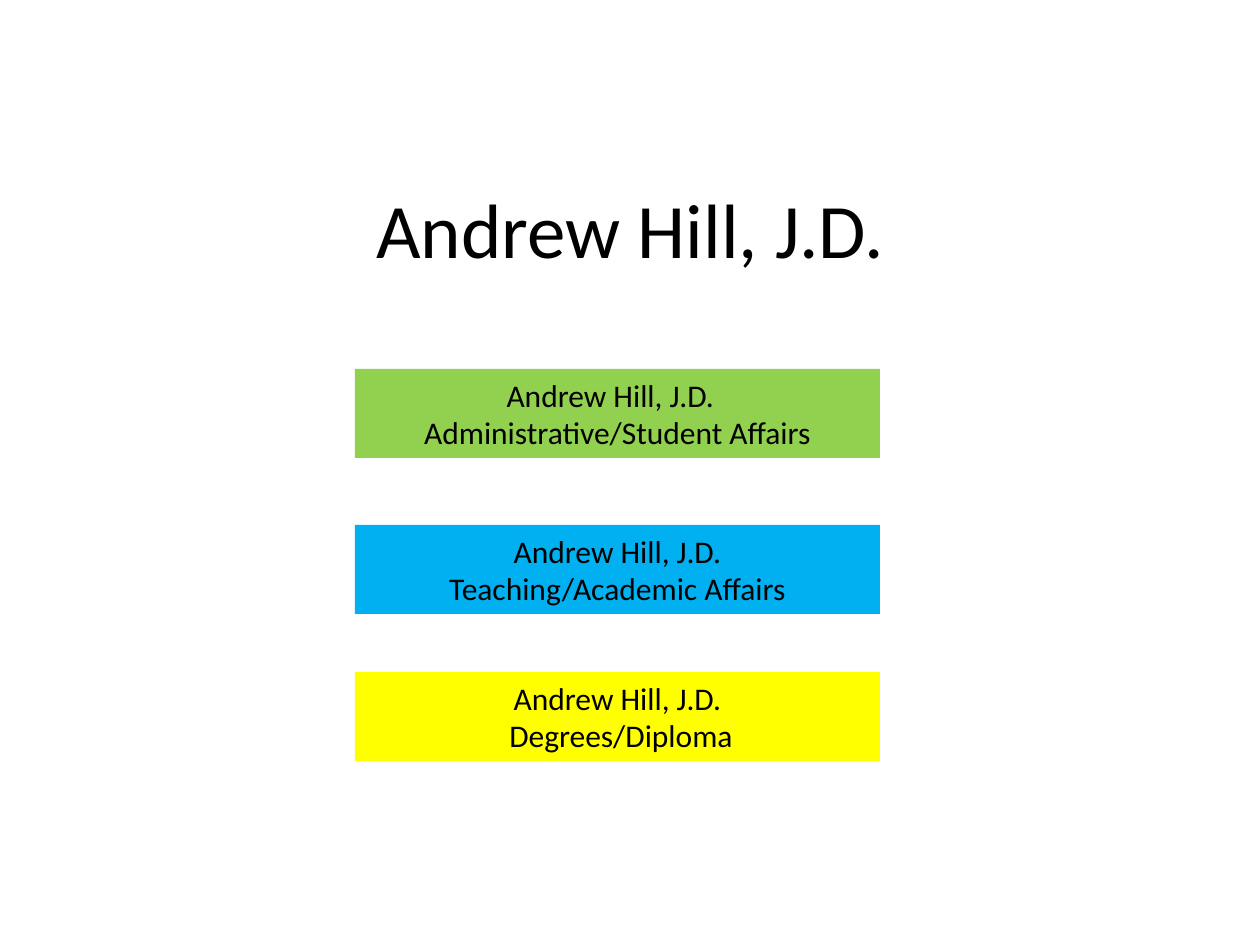
from pptx import Presentation
from pptx import util as u
from pptx.dml.color import RGBColor
from pptx.enum import shapes, text

PX = u.Inches(1) // 126
NAME = "Andrew Hill, J.D."
BARS = [
    (369, "92D050", NAME + "  \vAdministrative/Student Affairs"),
    (525, "00B0F0", NAME + "\nTeaching/Academic Affairs"),
    (672, "FFFF00", NAME + "\n Degrees/Diploma"),
]


def color(code):
    """Turn a hex string into a colour."""
    return RGBColor.from_string(code)


def place(*box):
    """Turn px lengths into EMU."""
    return [n * PX for n in box]


def write(shape, words, size):
    """Fill a shape with centred black text."""
    frame = shape.text_frame
    frame.text = words
    frame.word_wrap = True
    frame.vertical_anchor = text.MSO_ANCHOR.MIDDLE
    style = {"name": "Calibri", "size": u.Pt(size)}
    for para in frame.paragraphs:
        para.alignment = text.PP_ALIGN.CENTER
        for key, value in style.items():
            setattr(para.font, key, value)
        para.font.color.rgb = color("000000")


def title(slide, words):
    """Add the large name."""
    write(slide.shapes.add_textbox(*place(95, 126, 1071, 203)), words, 44)


def bar(slide, top, fill, words):
    """Add a filled bar with its label."""
    box = place(355, top, 525, 89)
    shape = slide.shapes.add_shape(shapes.MSO_SHAPE.RECTANGLE, *box)
    shape.shadow.inherit = False
    shape.fill.solid()
    shape.fill.fore_color.rgb = color(fill)
    shape.line.fill.background()
    write(shape, words, 18)
    shape.text_frame.auto_size = text.MSO_AUTO_SIZE.SHAPE_TO_FIT_TEXT


def main():
    """Build the slide and save it."""
    deck = Presentation()
    deck.slide_width, deck.slide_height = place(1260, 945)
    slide = deck.slides.add_slide(deck.slide_layouts[6])
    title(slide, NAME)
    for item in BARS:
        bar(slide, *item)
    deck.save("out.pptx")


if __name__ == "__main__":
    main()
